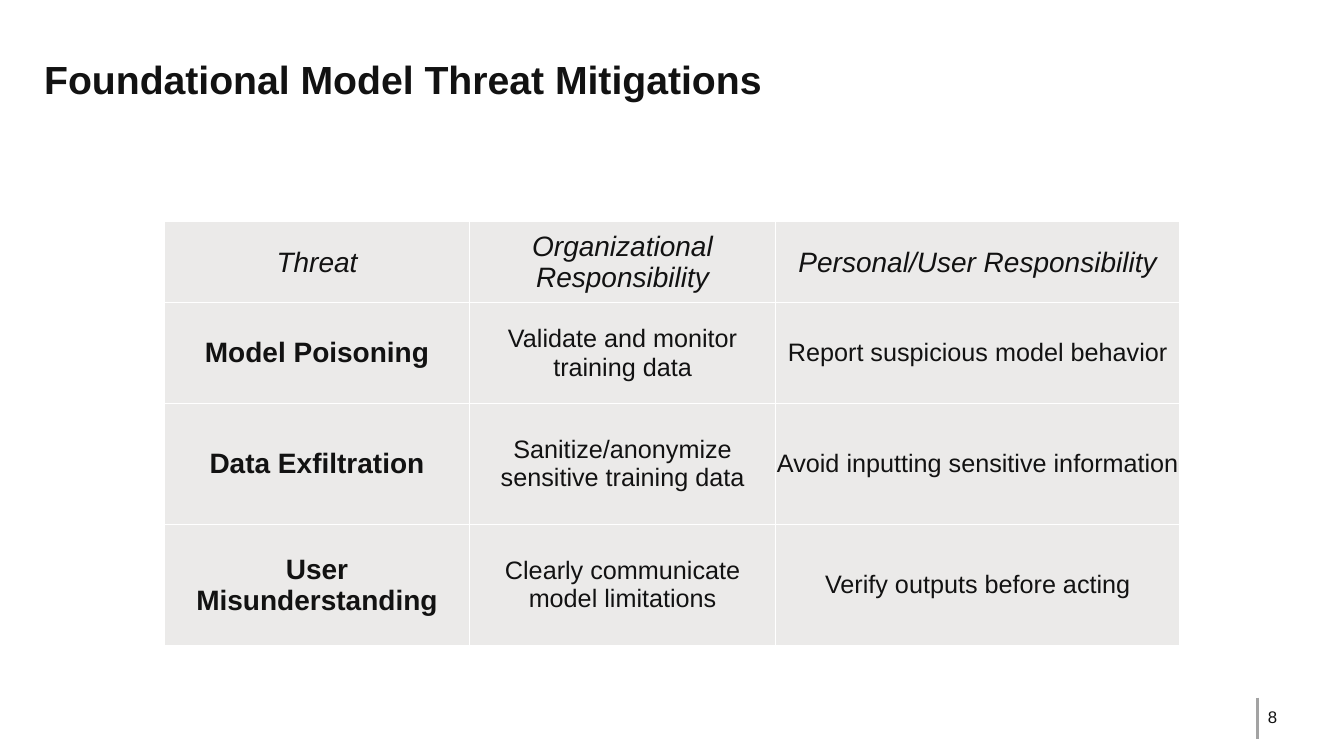
"""Build the slide on foundational model threat mitigations."""
from dataclasses import dataclass

from lxml import etree
from pptx import Presentation
from pptx.dml.color import RGBColor
from pptx.enum.shapes import MSO_CONNECTOR
from pptx.enum.text import MSO_ANCHOR, MSO_AUTO_SIZE, PP_ALIGN
from pptx.oxml.ns import qn
from pptx.util import Cm, Pt

STRAIGHT = MSO_CONNECTOR.STRAIGHT
MIDDLE = MSO_ANCHOR.MIDDLE
NO_FIT = MSO_AUTO_SIZE.NONE
LEFT, CENTER = PP_ALIGN.LEFT, PP_ALIGN.CENTER
TITLE_ONLY = 5


@dataclass(frozen=True)
class Theme:
    font: str = "Arial"
    ink: str = "121212"
    rule: str = "A3A3A3"
    cell: str = "EBEAE9"
    border: str = "FFFFFF"
    title: int = 28
    label: int = 20
    body: int = 18
    number: int = 12


class Deck:
    def __init__(self, prs, theme):
        self.theme = theme
        self.s = prs.slides.add_slide(prs.slide_layouts[TITLE_ONLY])

    def set_text(self, tf, text, size, align=LEFT, bold=False, italic=False):
        p = tf.paragraphs[0]
        p.text = text
        p.alignment = align
        font = p.font
        font.name, font.size = self.theme.font, Pt(size)
        font.bold, font.italic = bold, italic
        font.color.rgb = RGBColor.from_string(self.theme.ink)

    def title(self, text, x, y, w, h):
        sp = self.s.shapes.title
        sp.left, sp.top, sp.width, sp.height = Cm(x), Cm(y), Cm(w), Cm(h)
        tf = sp.text_frame
        tf.auto_size, tf.vertical_anchor = NO_FIT, MIDDLE
        self.set_text(tf, text, self.theme.title, bold=True)

    def text(self, text, x, y, w, h):
        tf = self.s.shapes.add_textbox(Cm(x), Cm(y), Cm(w), Cm(h)).text_frame
        tf.word_wrap, tf.vertical_anchor = True, MIDDLE
        self.set_text(tf, text, self.theme.number)

    def line(self, x1, y1, x2, y2, width):
        ln = self.s.shapes.add_connector(STRAIGHT, Cm(x1), Cm(y1), Cm(x2), Cm(y2))
        ln.line.color.rgb = RGBColor.from_string(self.theme.rule)
        ln.line.width = Pt(width)
        etree.SubElement(ln._element.spPr, qn("a:effectLst"))

    def borders(self, cell, width):
        tcPr = cell._tc.get_or_add_tcPr()
        for side in ("a:lnL", "a:lnR", "a:lnT", "a:lnB"):
            ln = etree.SubElement(tcPr, qn(side), w=str(Pt(width)))
            fill = etree.SubElement(ln, qn("a:solidFill"))
            etree.SubElement(fill, qn("a:srgbClr"), val=self.theme.border)

    def table(self, rows, x, y, widths, heights):
        t = self.theme
        table = self.s.shapes.add_table(
            len(rows), len(widths), Cm(x), Cm(y), Cm(sum(widths)), Cm(sum(heights))
        ).table
        for column, width in zip(table.columns, widths):
            column.width = Cm(width)
        for i, (row, height) in enumerate(zip(rows, heights)):
            table.rows[i].height = Cm(height)
            for j, text in enumerate(row):
                cell = table.cell(i, j)
                self.borders(cell, 1)
                cell.fill.solid()
                cell.fill.fore_color.rgb = RGBColor.from_string(t.cell)
                cell.margin_left = cell.margin_right = cell.margin_top = Cm(0.02)
                cell.margin_bottom = 0
                cell.vertical_anchor = MIDDLE
                header, threat = i == 0, i > 0 and j == 0
                size = t.label if header or threat else t.body
                self.set_text(cell.text_frame, text, size, CENTER, threat, header)


def main():
    prs = Presentation()
    prs.slide_width, prs.slide_height = Cm(33.87), Cm(19.05)
    deck = Deck(prs, Theme())
    deck.title("Foundational Model Threat Mitigations", 0.86, 0.86, 32.13, 2.26)
    rows = [
        ("Threat", "Organizational Responsibility", "Personal/User Responsibility"),
        ("Model Poisoning", "Validate and monitor training data",
         "Report suspicious model behavior"),
        ("Data Exfiltration", "Sanitize/anonymize sensitive training data",
         "Avoid inputting sensitive information"),
        ("User Misunderstanding", "Clearly communicate model limitations",
         "Verify outputs before acting"),
    ]
    deck.table(rows, 4.14, 5.59, (7.7, 7.7, 10.2), (2.03, 2.54, 3.05, 3.05))
    deck.line(31.7, 17.58, 31.7, 18.62, 2)
    deck.text("8", 31.7, 17.73, 1.32, 0.69)
    prs.save("out.pptx")


if __name__ == "__main__":
    main()
